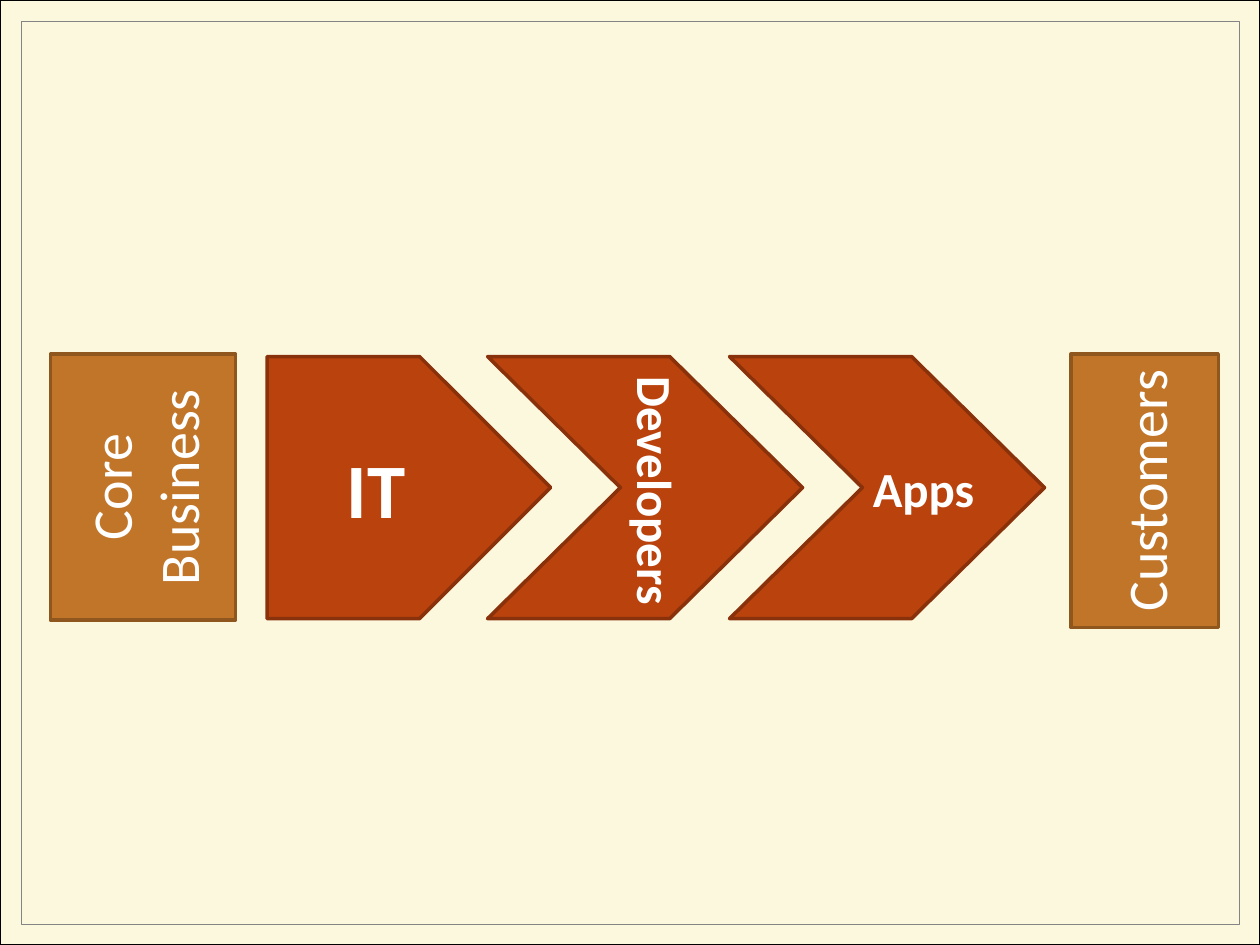
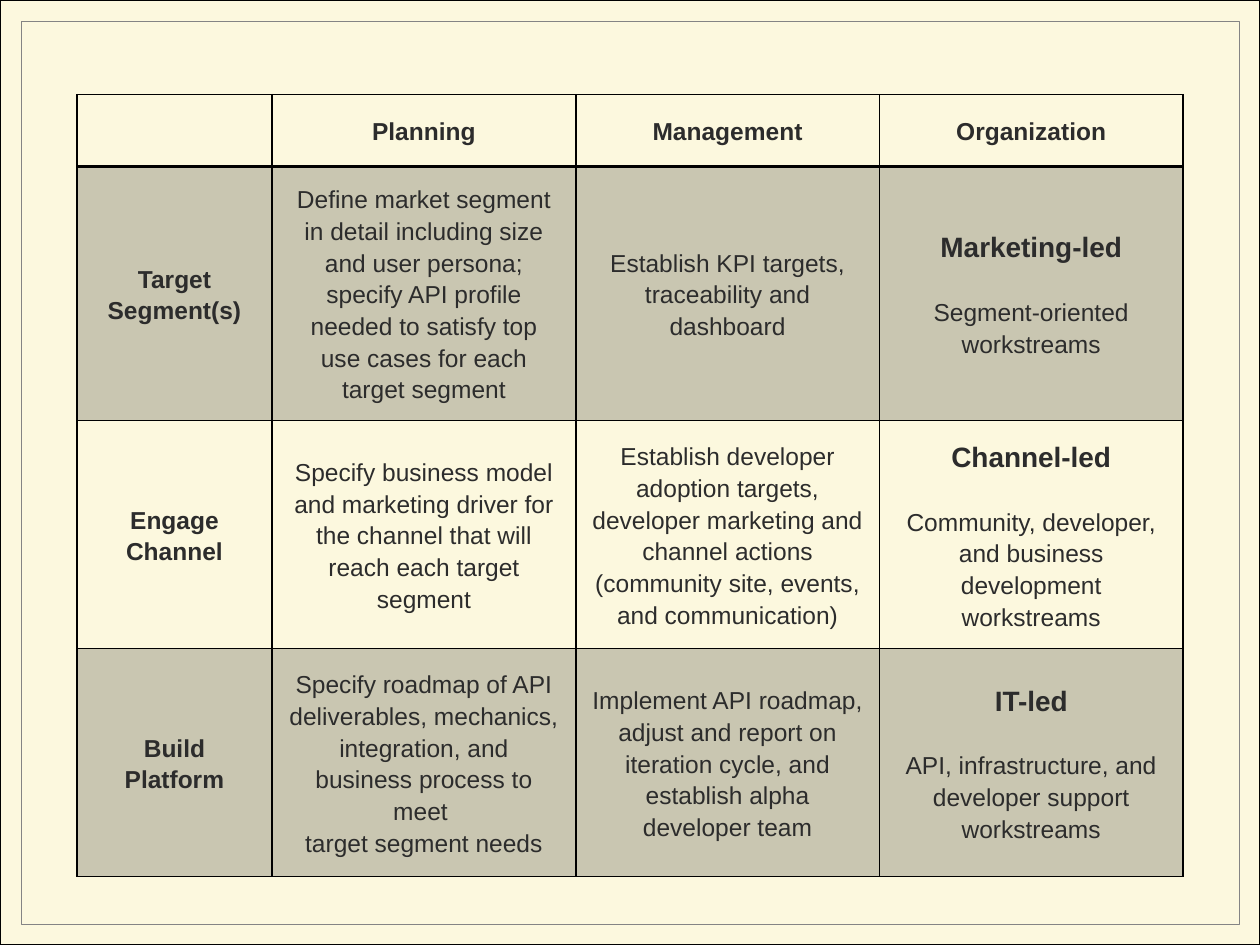
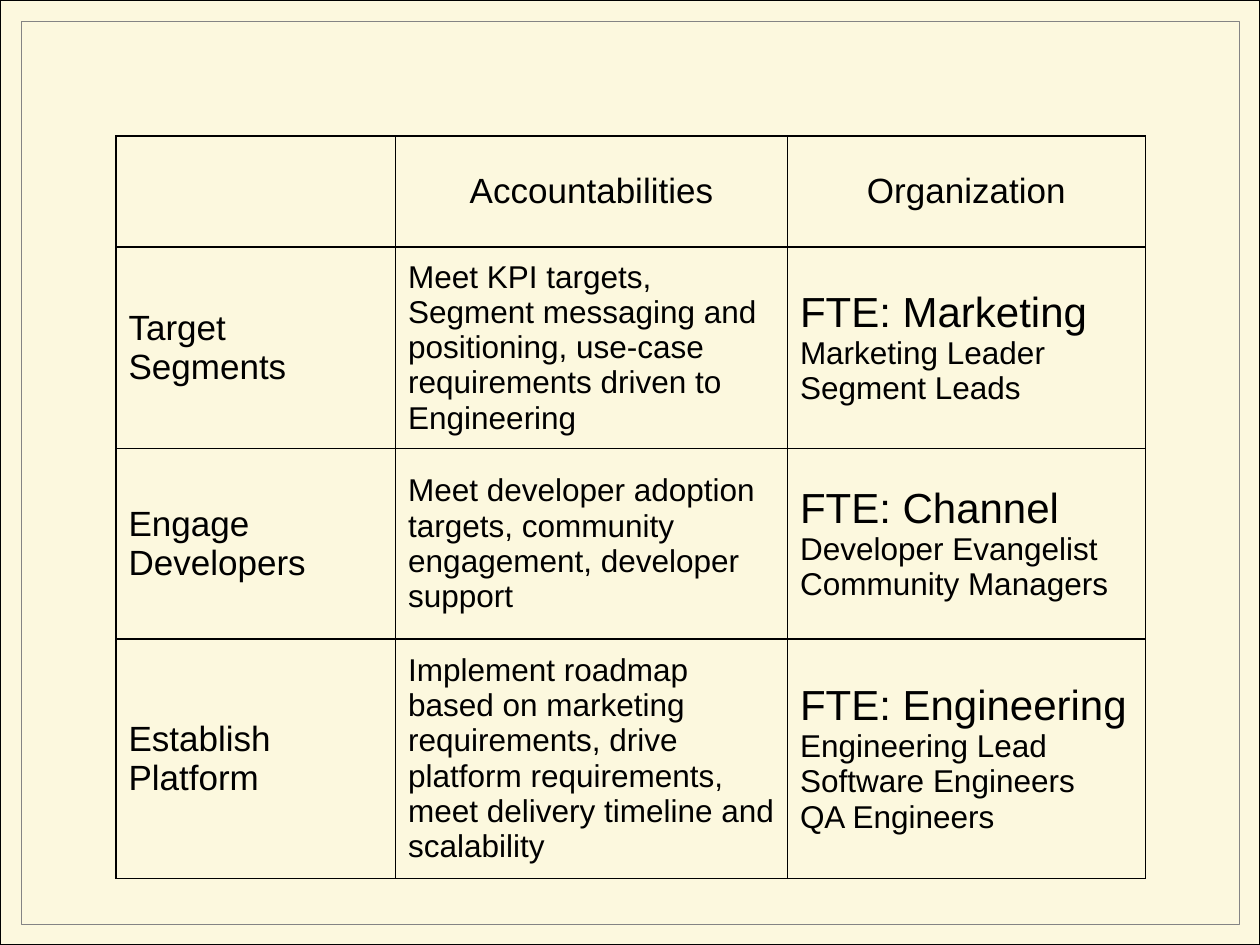
from dataclasses import dataclass

from lxml import etree
from pptx import Presentation
from pptx.dml.color import RGBColor
from pptx.enum.shapes import MSO_SHAPE
from pptx.enum.text import MSO_ANCHOR, MSO_AUTO_SIZE, PP_ALIGN
from pptx.oxml.ns import qn
from pptx.util import Inches, Pt

RECTANGLE = MSO_SHAPE.RECTANGLE
PENTAGON = MSO_SHAPE.PENTAGON
CHEVRON = MSO_SHAPE.CHEVRON
MIDDLE = MSO_ANCHOR.MIDDLE
TOP = MSO_ANCHOR.TOP
FIT_SHAPE = MSO_AUTO_SIZE.SHAPE_TO_FIT_TEXT
LEFT = PP_ALIGN.LEFT
CENTER = PP_ALIGN.CENTER
BLANK_LAYOUT = 6


@dataclass(frozen=True)
class Theme:
    paper: str = "FCF8DE"
    black: str = "000000"
    frame: str = "848484"
    ink: str = "2C2C2C"
    white: str = "FFFFFF"
    step: str = "B9420D"
    step_line: str = "89310A"
    end: str = "C17529"
    end_line: str = "8F571E"
    shade_percent: int = 20
    flow_font: str = "Calibri"
    table_font: str = "Arial"
    big_step: int = 44
    end_label: int = 32
    step_label: int = 28
    matrix_text: int = 14
    matrix_lead: int = 16
    roles_text: int = 18
    roles_head: int = 20
    roles_lead: int = 24


@dataclass(frozen=True)
class TextStyle:
    size: int
    color: str
    font: str
    bold: bool = False
    align: PP_ALIGN = CENTER
    spacing: float = 1.0
    before: int = 0


THEME = Theme()

MATRIX = [
    ["", "Planning", "Management", "Organization"],
    [
        "Target Segment(s)",
        "Define market segment in detail including size and user persona; specify API profile "
        "needed to satisfy top use cases for each target segment",
        "Establish KPI targets, traceability and dashboard",
        "Marketing-led\nSegment-oriented workstreams",
    ],
    [
        "Engage Channel",
        "Specify business model and marketing driver for the channel that will reach each "
        "target segment",
        "Establish developer adoption targets, developer marketing and channel actions "
        "(community site, events, and communication)",
        "Channel-led\nCommunity, developer, and business development workstreams",
    ],
    [
        "Build Platform",
        "Specify roadmap of API deliverables, mechanics, integration, and business process to "
        "meet \vtarget segment needs",
        "Implement API roadmap, adjust and report on iteration cycle, and establish alpha "
        "developer team",
        "IT-led\nAPI, infrastructure, and developer support workstreams",
    ],
]

ROLES = [
    ["", "Accountabilities", "Organization"],
    [
        "Target Segments",
        "Meet KPI targets, Segment messaging and positioning, use-case requirements driven to "
        "Engineering",
        "FTE: Marketing\nMarketing Leader\nSegment Leads",
    ],
    [
        "Engage Developers",
        "Meet developer adoption targets, community engagement, developer support",
        "FTE: Channel\nDeveloper Evangelist\nCommunity Managers",
    ],
    [
        "Establish Platform",
        "Implement roadmap based on marketing requirements, drive platform requirements, meet "
        "delivery timeline and scalability",
        "FTE: Engineering\nEngineering Lead\nSoftware Engineers\nQA Engineers",
    ],
]


def rgb(color):
    return RGBColor.from_string(color)


class Deck:
    def __init__(self, theme):
        self.theme = theme
        self.presentation = Presentation()
        self.presentation.slide_width = Inches(10)
        self.presentation.slide_height = Inches(7.5)
        self.slide = None

    def add_slide(self):
        layout = self.presentation.slide_layouts[BLANK_LAYOUT]
        self.slide = self.presentation.slides.add_slide(layout)
        self.shape(RECTANGLE, (0, 0, 10, 7.5), self.theme.paper, self.theme.black, 0.75)
        self.shape(RECTANGLE, (0.17, 0.17, 9.67, 7.17), None, self.theme.frame, 0.5)

    def shape(self, kind, box, fill, line, width=2, rotation=0):
        shape = self.slide.shapes.add_shape(kind, *map(Inches, box))
        shape.shadow.inherit = False
        shape.rotation = rotation
        if fill:
            shape.fill.solid()
            shape.fill.fore_color.rgb = rgb(fill)
        else:
            shape.fill.background()
        shape.line.color.rgb = rgb(line)
        shape.line.width = Pt(width)
        return shape

    def label(self, shape, text, style, anchor=MIDDLE):
        frame = shape.text_frame
        frame.word_wrap = True
        frame.vertical_anchor = anchor
        frame.text = text
        for paragraph in frame.paragraphs:
            self.format(paragraph, style)

    def text_box(self, text, box, style, rotation=0):
        text_box = self.slide.shapes.add_textbox(*map(Inches, box))
        text_box.rotation = rotation
        self.label(text_box, text, style, TOP)
        text_box.text_frame.auto_size = FIT_SHAPE

    def format(self, paragraph, style):
        paragraph.alignment = style.align
        paragraph.line_spacing = style.spacing
        paragraph.space_before = Pt(style.before)
        for run in paragraph.runs:
            run.font.name = style.font
            run.font.size = Pt(style.size)
            run.font.bold = style.bold
            run.font.color.rgb = rgb(style.color)

    def table(self, rows, box, widths, heights, style_for, margins=(0.1, 0.05),
              header_rule=1, shaded=False):
        table = self.slide.shapes.add_table(len(rows), len(widths), *map(Inches, box)).table
        table.first_row = False
        table.horz_banding = False
        for column, width in zip(table.columns, widths):
            column.width = Inches(width)
        for row, height in zip(table.rows, heights):
            row.height = Inches(height)
        for row_index, texts in enumerate(rows):
            for column_index, text in enumerate(texts):
                cell = table.cell(row_index, column_index)
                cell.vertical_anchor = MIDDLE
                cell.margin_left = cell.margin_right = Inches(margins[0])
                cell.margin_top = cell.margin_bottom = Inches(margins[1])
                self.borders(cell, top=header_rule if row_index == 1 else 1,
                             bottom=header_rule if row_index == 0 else 1)
                self.shade(cell, shaded and row_index % 2 == 1)
                cell.text_frame.text = text
                for line_index, paragraph in enumerate(cell.text_frame.paragraphs):
                    self.format(paragraph, style_for(row_index, column_index, line_index))

    def borders(self, cell, top, bottom):
        properties = cell._tc.get_or_add_tcPr()
        for tag, width in (("a:lnL", 1), ("a:lnR", 1), ("a:lnT", top), ("a:lnB", bottom)):
            line = etree.SubElement(properties, qn(tag), w=str(Pt(width)))
            fill = etree.SubElement(line, qn("a:solidFill"))
            etree.SubElement(fill, qn("a:srgbClr"), val=self.theme.black)

    def shade(self, cell, shaded):
        if not shaded:
            cell.fill.background()
            return
        cell.fill.solid()
        cell.fill.fore_color.rgb = rgb(self.theme.black)
        color = cell._tc.tcPr.find(qn("a:solidFill")).find(qn("a:srgbClr"))
        etree.SubElement(color, qn("a:alpha"), val=str(self.theme.shade_percent * 1000))


def matrix_style(row, column, line):
    lead = row > 0 and column == 3 and line == 0
    return TextStyle(
        size=THEME.matrix_lead if lead else THEME.matrix_text,
        color=THEME.ink,
        font=THEME.table_font,
        bold=lead or row == 0 or column == 0,
        spacing=1.15,
        before=18 if line else 0,
    )


def roles_style(row, column, line):
    if row == 0 or column == 0:
        size = THEME.roles_head
    elif column == 2 and line == 0:
        size = THEME.roles_lead
    else:
        size = THEME.roles_text
    return TextStyle(size, THEME.black, THEME.table_font, align=CENTER if row == 0 else LEFT)


def add_value_chain(deck):
    deck.add_slide()
    big_step = TextStyle(THEME.big_step, THEME.white, THEME.flow_font, bold=True)
    step_label = TextStyle(THEME.step_label, THEME.white, THEME.flow_font, bold=True)
    end_label = TextStyle(THEME.end_label, THEME.white, THEME.flow_font)

    start = deck.shape(PENTAGON, (2.12, 2.83, 2.25, 2.08), THEME.step, THEME.step_line)
    deck.label(start, "IT", big_step)
    for left, text, text_left, text_top, rotation in (
        (3.87, "Developers", 3.96, 3.61, 90),
        (5.79, "Apps", 6.08, 3.59, 0),
    ):
        chevron = deck.shape(CHEVRON, (left, 2.83, 2.5, 2.08), THEME.step, THEME.step_line)
        chevron.adjustments[0] = 0.507
        deck.text_box(text, (text_left, text_top, 2.5, 0.57), step_label, rotation)
    for text, box in (
        ("Core Business", (0.08, 3.13, 2.11, 1.47)),
        ("Customers", (8, 3.31, 2.17, 1.17)),
    ):
        end = deck.shape(RECTANGLE, box, THEME.end, THEME.end_line, rotation=270)
        deck.label(end, text, end_label)


def add_matrix(deck):
    deck.add_slide()
    deck.table(MATRIX, (0.61, 0.75, 8.78, 6), [1.55] + [2.41] * 3, [0.57] + [1.81] * 3,
               matrix_style, margins=(0.13, 0.07), header_rule=2, shaded=True)


def add_roles(deck):
    deck.add_slide()
    deck.table(ROLES, (0.92, 1.08, 8.17, 5.5), [2.22, 3.11, 2.84], [0.88, 1.51, 1.51, 1.55],
               roles_style)


def main():
    deck = Deck(THEME)
    add_value_chain(deck)
    add_matrix(deck)
    add_roles(deck)
    deck.presentation.save("out.pptx")


if __name__ == "__main__":
    main()
